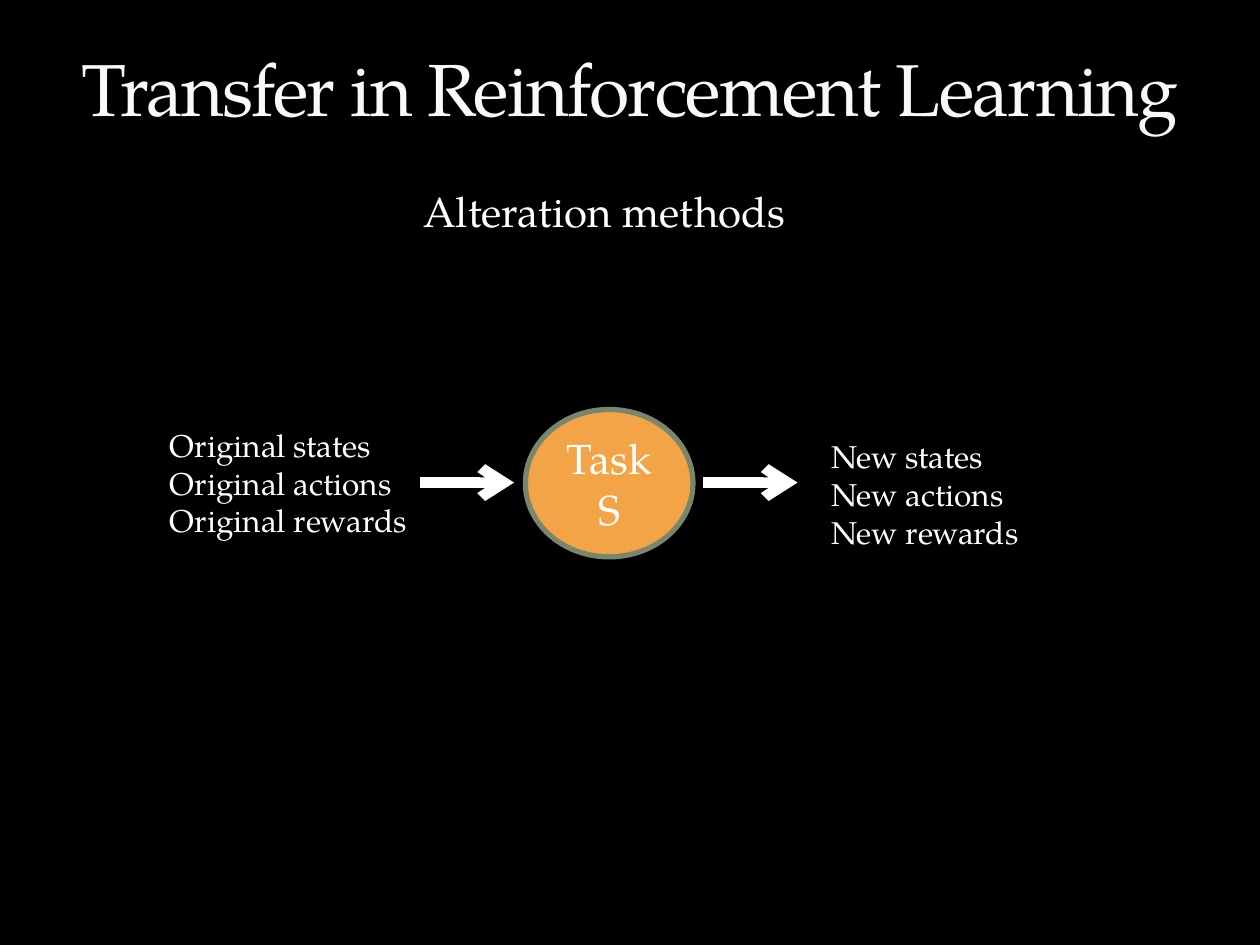
from pptx import Presentation
from pptx.dml.color import RGBColor
from pptx.enum.shapes import MSO_CONNECTOR, MSO_SHAPE
from pptx.enum.text import MSO_ANCHOR, PP_ALIGN
from pptx.oxml.ns import qn
from pptx.util import Inches, Pt
from lxml import etree

STRAIGHT = MSO_CONNECTOR.STRAIGHT
ELLIPSE = MSO_SHAPE.OVAL
MIDDLE, BOTTOM = MSO_ANCHOR.MIDDLE, MSO_ANCHOR.BOTTOM
LEFT, CENTER = PP_ALIGN.LEFT, PP_ALIGN.CENTER

FONT = "TeX Gyre Pagella"
BLACK = RGBColor(0x00, 0x00, 0x00)
WHITE = RGBColor(0xFF, 0xFF, 0xFF)
OFF_WHITE = RGBColor(0xF9, 0xF9, 0xF9)
ORANGE = RGBColor(0xF3, 0xA4, 0x47)
SAGE = RGBColor(0x7A, 0x86, 0x6C)


class SlideBuilder:
    """Holds the text style and the current slide."""

    def __init__(self, slide, font=FONT, color=WHITE):
        self.slide = slide
        self.font = font
        self.color = color
        slide.background.fill.solid()
        slide.background.fill.fore_color.rgb = BLACK

    def style_text(self, frame, text, size, align, color=None):
        frame.word_wrap = True
        frame.text = text
        for paragraph in frame.paragraphs:
            paragraph.alignment = align
            for run in paragraph.runs:
                run.font.name = self.font
                run.font.size = Pt(size)
                run.font.color.rgb = color or self.color

    def title(self, text, left, top, width, height):
        heading = self.slide.shapes.title
        heading.left, heading.top = Inches(left), Inches(top)
        heading.width, heading.height = Inches(width), Inches(height)
        heading.text_frame.vertical_anchor = BOTTOM
        self.style_text(heading.text_frame, text, 42, CENTER, OFF_WHITE)
        # Tighten the letter spacing by one point
        for run in heading.text_frame.paragraphs[0].runs:
            run.font._element.set("spc", "-100")

    def label(self, text, left, top, width, height, size=18, align=LEFT):
        box = self.slide.shapes.add_textbox(
            Inches(left), Inches(top), Inches(width), Inches(height))
        self.style_text(box.text_frame, text, size, align)

    def node(self, text, left, top, width, height):
        oval = self.slide.shapes.add_shape(
            ELLIPSE, Inches(left), Inches(top), Inches(width), Inches(height))
        oval.shadow.inherit = False
        oval.fill.solid()
        oval.fill.fore_color.rgb = ORANGE
        oval.line.color.rgb = SAGE
        oval.line.width = Pt(3)
        oval.text_frame.vertical_anchor = MIDDLE
        self.style_text(oval.text_frame, text, 24, CENTER)

    def arrow(self, left, y, length):
        link = self.slide.shapes.add_connector(
            STRAIGHT, Inches(left), Inches(y), Inches(left + length), Inches(y))
        link.line.color.rgb = self.color
        link.line.width = Pt(6)
        # Arrowhead at the end, and no theme shadow
        properties = link._element.spPr
        etree.SubElement(properties.find(qn("a:ln")), qn("a:tailEnd"), type="arrow")
        etree.SubElement(properties, qn("a:effectLst"))


def main():
    deck = Presentation()
    deck.slide_width, deck.slide_height = Inches(10), Inches(7.5)
    title_only = deck.slide_layouts[5]
    builder = SlideBuilder(deck.slides.add_slide(title_only))

    # Heading and subheading
    builder.title("Transfer in Reinforcement Learning", 0.5, 0.17, 9, 0.92)
    builder.label("Alteration methods", 2.92, 1.42, 3.75, 0.5, 24, CENTER)

    # Source task
    builder.node("Task S", 4.17, 3.25, 1.33, 1.17)

    # What goes into the task and what comes out
    parts = ("states", "actions", "rewards")
    for kind, left, top, width in (("Original", 1.25, 3.33, 2.25),
                                   ("New", 6.5, 3.42, 1.92)):
        lines = "\n".join(f"{kind} {part}" for part in parts)
        builder.label(lines, left, top, width, 1.01)
    for arrow_left in (3.33, 5.58):
        builder.arrow(arrow_left, 3.83, 0.75)

    deck.save("out.pptx")


if __name__ == "__main__":
    main()
